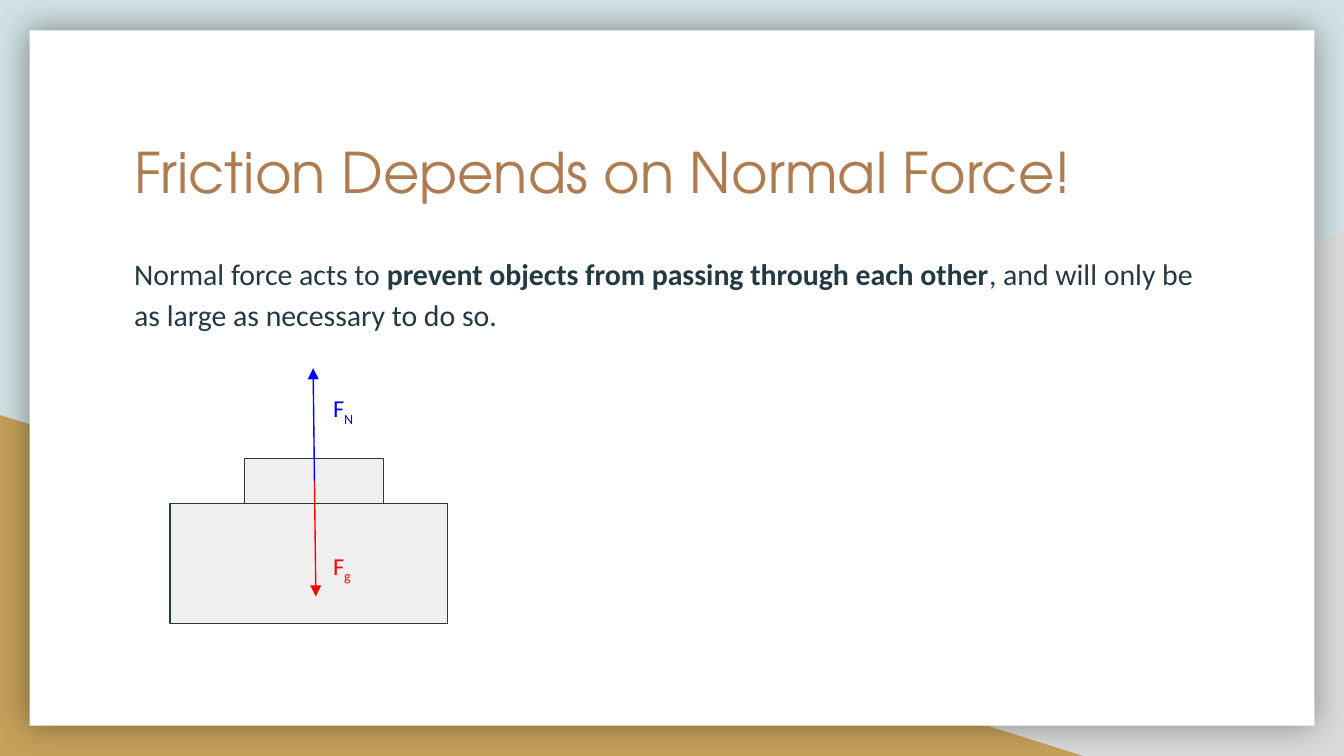
from pptx import Presentation
from pptx.dml.color import RGBColor
from pptx.enum.shapes import MSO_CONNECTOR, MSO_SHAPE
from pptx.oxml import parse_xml
from pptx.oxml.ns import nsdecls, qn
from pptx.util import Inches, Pt

RECTANGLE = MSO_SHAPE.RECTANGLE
TRIANGLE = MSO_SHAPE.RIGHT_TRIANGLE
STRAIGHT = MSO_CONNECTOR.STRAIGHT

WIDTH, HEIGHT = Inches(10), Inches(5.625)
HEADING_FONT, BODY_FONT = "TeX Gyre Adventor", "Calibri"
SKY, GREY, GOLD, WHITE = "D0E0E3", "D9D9D9", "C4A15A", "FFFFFF"
COPPER, INK, BLOCK = "AF7B51", "233A44", "EFEFEF"
BLUE, RED = "0000FF", "FF0000"


def color(value):
    return RGBColor.from_string(value)


def place(*shares):
    """Turn alternating percentages of slide width and height into lengths."""
    return [round(share * (HEIGHT if index % 2 else WIDTH) / 100)
            for index, share in enumerate(shares)]


def add_panel(shapes, kind, area, fill, outline=None):
    panel = shapes.add_shape(kind, *place(*area))
    panel.shadow.inherit = False
    panel.fill.solid()
    panel.fill.fore_color.rgb = color(fill)
    if outline:
        panel.line.color.rgb = color(outline)
        panel.line.width = Pt(0.75)
    else:
        panel.line.fill.background()
    return panel


def add_glow(panel):
    effects = panel._element.spPr.find(qn("a:effectLst"))
    effects.append(parse_xml(
        f'<a:outerShdw {nsdecls("a")} blurRad="{Pt(18)}" dist="0" dir="0" '
        'algn="ctr" rotWithShape="0"><a:srgbClr val="000000">'
        '<a:alpha val="40000"/></a:srgbClr></a:outerShdw>'))


def add_text(shapes, area, pieces, font, size, ink):
    """Add one paragraph; each piece is its text and a font attribute or None."""
    box = shapes.add_textbox(*place(*area))
    frame = box.text_frame
    frame.word_wrap = True
    frame.margin_left = frame.margin_right = Inches(0.1)
    frame.margin_top = frame.margin_bottom = Inches(0.1)
    para = frame.paragraphs[0]
    for text, style in pieces:
        span = para.add_run()
        span.text = text
        span.font.name = font
        span.font.size = Pt(size)
        span.font.color.rgb = color(ink)
        if style == "bold":
            span.font.bold = True
        elif style == "subscript":
            span.font._element.set("baseline", "-25000")
    return para


def add_force(shapes, start, tip, label_top, subscript, ink):
    arrow = shapes.add_connector(STRAIGHT, *place(*start, *tip))
    arrow.line.color.rgb = color(ink)
    arrow.line.width = Pt(0.75)
    arrow.line._get_or_add_ln().append(
        parse_xml(f'<a:tailEnd {nsdecls("a")} type="triangle"/>'))
    arrow._element.spPr.append(parse_xml(f'<a:effectLst {nsdecls("a")}/>'))
    add_text(shapes, (23.8, label_top, 4.9, 6.9),
             [("F", None), (subscript, "subscript")], BODY_FONT, 13, ink)


def add_backdrop(page):
    page.background.fill.solid()
    page.background.fill.fore_color.rgb = color(SKY)
    right_corner = add_panel(page.shapes, TRIANGLE, (39.2, 30.2, 60.8, 69.8), GREY)
    right_corner._element.spPr.find(qn("a:xfrm")).set("flipH", "1")
    add_panel(page.shapes, TRIANGLE, (0, 54.9, 80.6, 45.1), GOLD)
    add_glow(add_panel(page.shapes, RECTANGLE, (2.2, 4, 95.6, 92), WHITE))


def add_force_diagram(page):
    shapes = page.shapes.add_group_shape().shapes
    add_panel(shapes, RECTANGLE, (18.2, 60.65, 10.35, 5.95), BLOCK, INK)
    add_panel(shapes, RECTANGLE, (12.65, 66.6, 20.65, 15.85), BLOCK, INK)
    center = (23.4, 63.65)
    add_force(shapes, center, (23.3, 48.7), 50.3, "N", BLUE)
    add_force(shapes, center, (23.5, 78.9), 71.1, "g", RED)


def main():
    deck = Presentation()
    deck.slide_width, deck.slide_height = WIDTH, HEIGHT
    page = deck.slides.add_slide(deck.slide_layouts[6])
    add_backdrop(page)

    # Heading and statement
    add_text(page.shapes, (9, 16.4, 82.1, 18.5),
             [("Friction Depends on Normal Force!", None)],
             HEADING_FONT, 30, COPPER)
    statement = add_text(
        page.shapes, (9, 31.3, 82.1, 13.7),
        [("Normal force acts to ", None),
         ("prevent objects from passing through each other", "bold"),
         (", and will only be as large as necessary to do so.", None)],
        BODY_FONT, 16, INK)
    statement.line_spacing = 1.15
    statement.space_after = Pt(12)

    add_force_diagram(page)
    deck.save("out.pptx")


if __name__ == "__main__":
    main()
